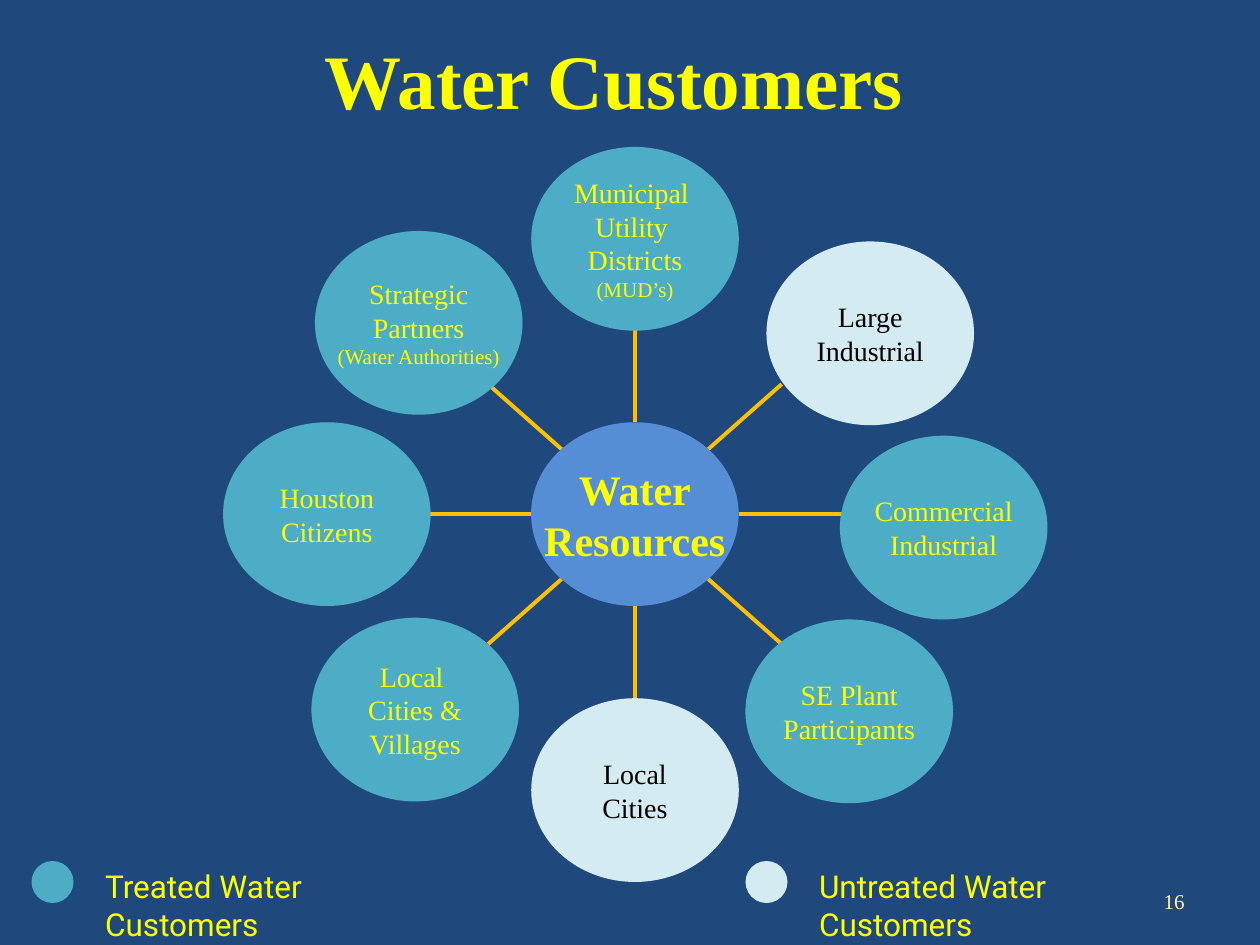
import math
from pptx import Presentation
from pptx.dml.color import RGBColor
from pptx.enum.shapes import MSO_CONNECTOR, MSO_SHAPE
from pptx.enum.text import MSO_ANCHOR, PP_ALIGN
from pptx.oxml.ns import qn
from pptx.util import Pt

LINE, OVAL = MSO_CONNECTOR.STRAIGHT, MSO_SHAPE.OVAL
MIDDLE, TOP = MSO_ANCHOR.MIDDLE, MSO_ANCHOR.TOP
LEFT, CENTER, RIGHT = PP_ALIGN.LEFT, PP_ALIGN.CENTER, PP_ALIGN.RIGHT

NAVY = RGBColor(0x1F, 0x49, 0x7D)
TEAL = RGBColor(0x4D, 0xAD, 0xC6)
PALE = RGBColor(0xD3, 0xEB, 0xF1)
BLUE = RGBColor(0x55, 0x8E, 0xD5)
GOLD = RGBColor(0xFF, 0xC0, 0x00)
YELLOW = RGBColor(0xFF, 0xFF, 0x00)
CREAM = RGBColor(0xFF, 0xFF, 0x8C)
BLACK = RGBColor(0, 0, 0)
SERIF, SANS = "Times New Roman", "Roboto"

NODE_W, NODE_H = 118.6, 105
HUB_X, HUB_Y = 362.8, 293.8
DOT = 24

# left, top, treated water, lines
NODES = [
    (303.6, 84, True, ["Municipal ", "Utility ", "Districts", "(MUD’s)"]),
    (438, 138, False, ["Large", "Industrial"]),
    (480, 249, True, ["Commercial", "Industrial"]),
    (426, 354, True, ["SE Plant", "Participants"]),
    (303.6, 399, False, ["Local", "Cities"]),
    (178, 353, True, ["Local ", "Cities &", "Villages"]),
    (127.5, 241.3, True, ["Houston", "Citizens"]),
    (180, 132, True, ["Strategic", "Partners", "(Water Authorities)"]),
]

# left, text width, fill, label
LEGEND = [
    (18, 215, TEAL, "Treated Water Customers"),
    (426, 232, PALE, "Untreated Water Customers"),
]


def set_text(frame, lines, size, color, font=SERIF, align=CENTER, bold=False):
    """Fill the frame; lines in brackets are set at 12 pt."""
    frame.text = "\n".join(lines)
    for para in frame.paragraphs:
        para.alignment = align
        for run in para.runs:
            run.font.name = font
            run.font.size = Pt(12 if run.text.startswith("(") else size)
            run.font.color.rgb = color
            run.font.bold = bold


def add_title(slide, text):
    title = slide.shapes.title
    title.left, title.top, title.width, title.height = Pt(0), Pt(12), Pt(702), Pt(66)
    title.text_frame.vertical_anchor = MIDDLE
    set_text(title.text_frame, [text], 44, YELLOW, bold=True)


def add_oval(slide, x, y, w, h, fill):
    oval = slide.shapes.add_shape(OVAL, Pt(x), Pt(y), Pt(w), Pt(h))
    oval.shadow.inherit = False
    oval.fill.solid()
    oval.fill.fore_color.rgb = fill
    oval.line.fill.background()
    return oval


def add_node(slide, x, y, fill, lines, size, color, bold=False):
    frame = add_oval(slide, x, y, NODE_W, NODE_H, fill).text_frame
    frame.word_wrap = False
    frame.vertical_anchor = MIDDLE
    frame.margin_left = frame.margin_right = Pt(4.5)
    frame.margin_top = frame.margin_bottom = Pt(2.25)
    set_text(frame, lines, size, color, bold=bold)


def add_spoke(slide, angle):
    """Draw a line from the hub's edge to twice the hub's radius."""
    dx = NODE_W / 2 * math.cos(angle)
    dy = NODE_H / 2 * math.sin(angle)
    spoke = slide.shapes.add_connector(
        LINE, Pt(HUB_X + dx), Pt(HUB_Y + dy), Pt(HUB_X + 2 * dx), Pt(HUB_Y + 2 * dy))
    spoke.line.color.rgb = GOLD
    spoke.line.width = Pt(2.25)
    props = spoke._element.spPr
    props.append(props.makeelement(qn("a:effectLst"), {}))


def add_label(slide, x, y, w, text, size, color, font, align, anchor):
    frame = slide.shapes.add_textbox(Pt(x), Pt(y), Pt(w), Pt(29)).text_frame
    frame.word_wrap = True
    frame.vertical_anchor = anchor
    set_text(frame, [text], size, color, font, align)


def main():
    prs = Presentation()
    prs.slide_width, prs.slide_height = Pt(720), Pt(540)
    slide = prs.slides.add_slide(prs.slide_layouts[5])
    slide.background.fill.solid()
    slide.background.fill.fore_color.rgb = NAVY
    add_title(slide, "Water Customers")

    for i in range(len(NODES)):
        add_spoke(slide, i * math.tau / len(NODES))
    for x, y, treated, lines in NODES:
        fill, color = (TEAL, YELLOW) if treated else (PALE, BLACK)
        add_node(slide, x, y, fill, lines, 16, color)
    add_node(slide, HUB_X - NODE_W / 2, HUB_Y - NODE_H / 2, BLUE,
             ["Water", "Resources"], 24, YELLOW, bold=True)

    for x, w, fill, text in LEGEND:
        add_oval(slide, x, 492, DOT, DOT, fill)
        add_label(slide, x + 35, 492, w, text, 18, YELLOW, SANS, LEFT, TOP)
    add_label(slide, 516, 500.5, 168, "16", 12, CREAM, SERIF, RIGHT, MIDDLE)
    prs.save("out.pptx")


if __name__ == "__main__":
    main()
